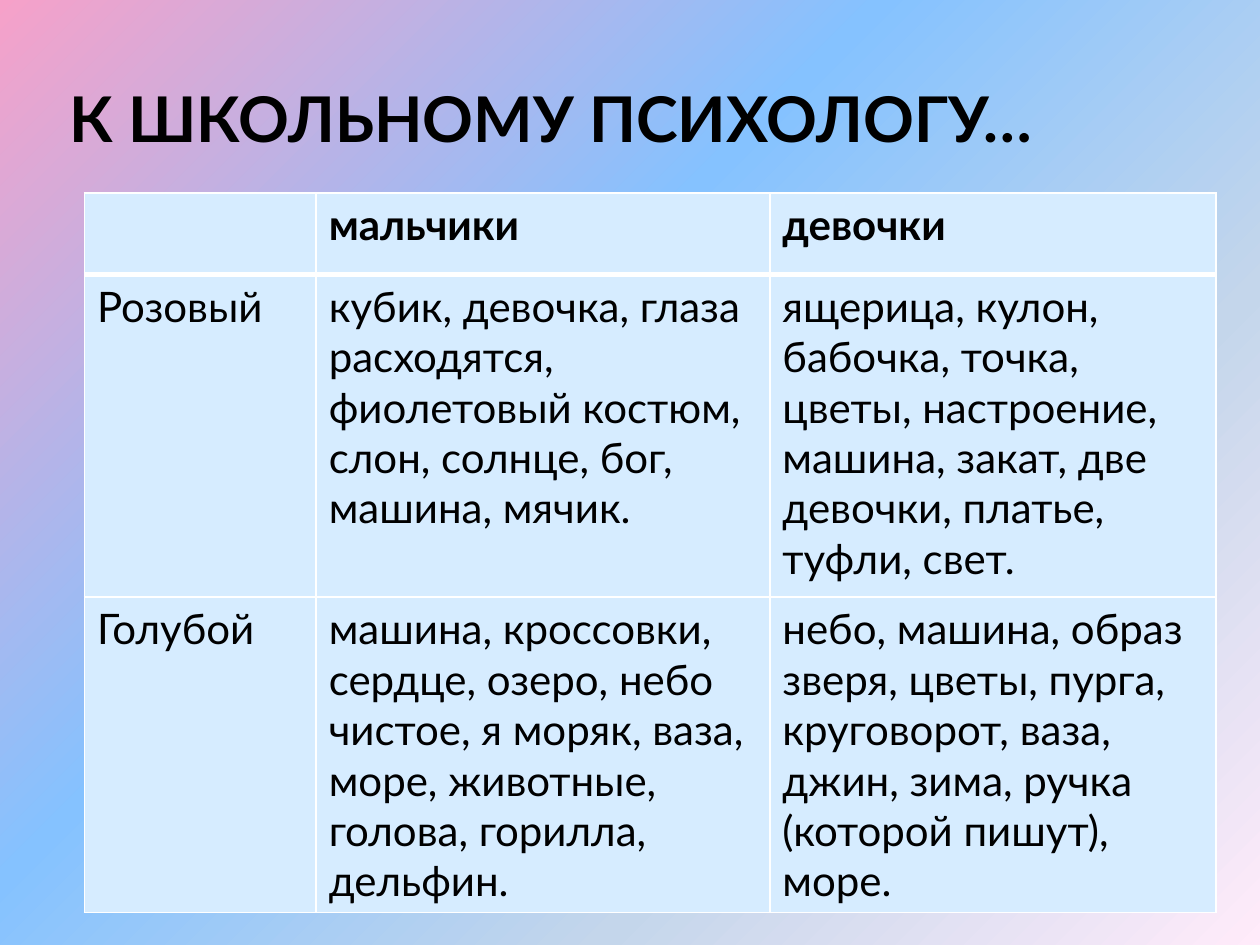
"""Build a slide with a table of children's colour associations."""
from dataclasses import dataclass

from lxml import etree
from pptx import Presentation
from pptx.dml.color import RGBColor
from pptx.enum.text import MSO_ANCHOR
from pptx.oxml.ns import qn
from pptx.util import Inches, Pt

BOTTOM = MSO_ANCHOR.BOTTOM


@dataclass(frozen=True)
class Theme:
    font: str = "Lato"
    ink: str = "000000"
    cell: str = "D6ECFF"
    border: str = "FFFFFF"
    title_size: int = 36
    body_size: int = 24
    thin: int = 1
    thick: int = 3
    angle: int = 315
    stops: tuple = ((0, "F6A1C9"), (40, "85C2FF"), (70, "C4D6EB"), (100, "FFEBFA"))


@dataclass(frozen=True)
class Grid:
    left: float
    top: float
    cols: tuple
    rows: tuple


THEME = Theme()
GRID = Grid(0.67, 1.53, (1.84, 3.6, 3.54), (0.65, 2.56, 2.5))
TITLE = "К ШКОЛЬНОМУ ПСИХОЛОГУ…"
ROWS = (
    ("", "мальчики", "девочки"),
    ("Розовый",
     "кубик, девочка, глаза расходятся, фиолетовый костюм, слон, солнце, бог, "
     "машина, мячик.",
     "ящерица, кулон, бабочка, точка, цветы, настроение, машина, закат, две "
     "девочки, платье, туфли, свет."),
    ("Голубой",
     "машина, кроссовки, сердце, озеро, небо чистое, я моряк, ваза, море, "
     "животные, голова, горилла, дельфин.",
     "небо, машина, образ зверя, цветы, пурга, круговорот, ваза, джин, зима, "
     "ручка (которой пишут), море."),
)


def add_color(parent, color: str) -> None:
    etree.SubElement(parent, qn("a:srgbClr"), val=color)


def paint_background(s) -> None:
    fill = s.background.fill
    fill.gradient()
    fill.gradient_angle = THEME.angle
    stops = s.element.xpath(".//p:bg//a:gsLst")[0]
    for stop in list(stops):
        stops.remove(stop)
    for share, color in THEME.stops:
        add_color(etree.SubElement(stops, qn("a:gs"), pos=str(share * 1000)), color)


def write(tf, text: str, size: int, bold: bool) -> None:
    p = tf.paragraphs[0]
    p.font.name, p.font.size, p.font.bold = THEME.font, Pt(size), bold
    p.font.color.rgb = RGBColor.from_string(THEME.ink)
    if text:
        p.add_run().text = text


def add_title(s) -> None:
    box = s.shapes.add_textbox(Inches(0.5), Inches(0.35), Inches(7.92), Inches(0.88))
    tf = box.text_frame
    tf.word_wrap, tf.vertical_anchor = True, BOTTOM
    tf.margin_left = tf.margin_right = Inches(0.05)
    tf.margin_top = tf.margin_bottom = 0
    write(tf, TITLE, THEME.title_size, True)


def style_cell(cell, row: int) -> None:
    widths = {"L": THEME.thin, "R": THEME.thin,
              "T": THEME.thick if row == 1 else THEME.thin,
              "B": THEME.thick if row == 0 else THEME.thin}
    tc_pr = cell._tc.get_or_add_tcPr()
    for side, width in widths.items():
        ln = etree.SubElement(tc_pr, qn(f"a:ln{side}"), w=str(Pt(width)))
        add_color(etree.SubElement(ln, qn("a:solidFill")), THEME.border)
    cell.fill.solid()
    cell.fill.fore_color.rgb = RGBColor.from_string(THEME.cell)


def add_grid(s, grid: Grid) -> None:
    table = s.shapes.add_table(
        len(grid.rows), len(grid.cols), Inches(grid.left), Inches(grid.top),
        Inches(sum(grid.cols)), Inches(sum(grid.rows))).table
    table.horz_banding = False
    for col, width in zip(table.columns, grid.cols):
        col.width = Inches(width)
    for i, (row, height) in enumerate(zip(table.rows, grid.rows)):
        row.height = Inches(height)
        for cell, text in zip(row.cells, ROWS[i]):
            style_cell(cell, i)
            write(cell.text_frame, text, THEME.body_size, i == 0)


def main() -> None:
    prs = Presentation()
    prs.slide_width, prs.slide_height = Inches(10), Inches(7.5)
    s = prs.slides.add_slide(prs.slide_layouts[6])
    paint_background(s)
    add_title(s)
    add_grid(s, GRID)
    prs.save("out.pptx")


if __name__ == "__main__":
    main()
